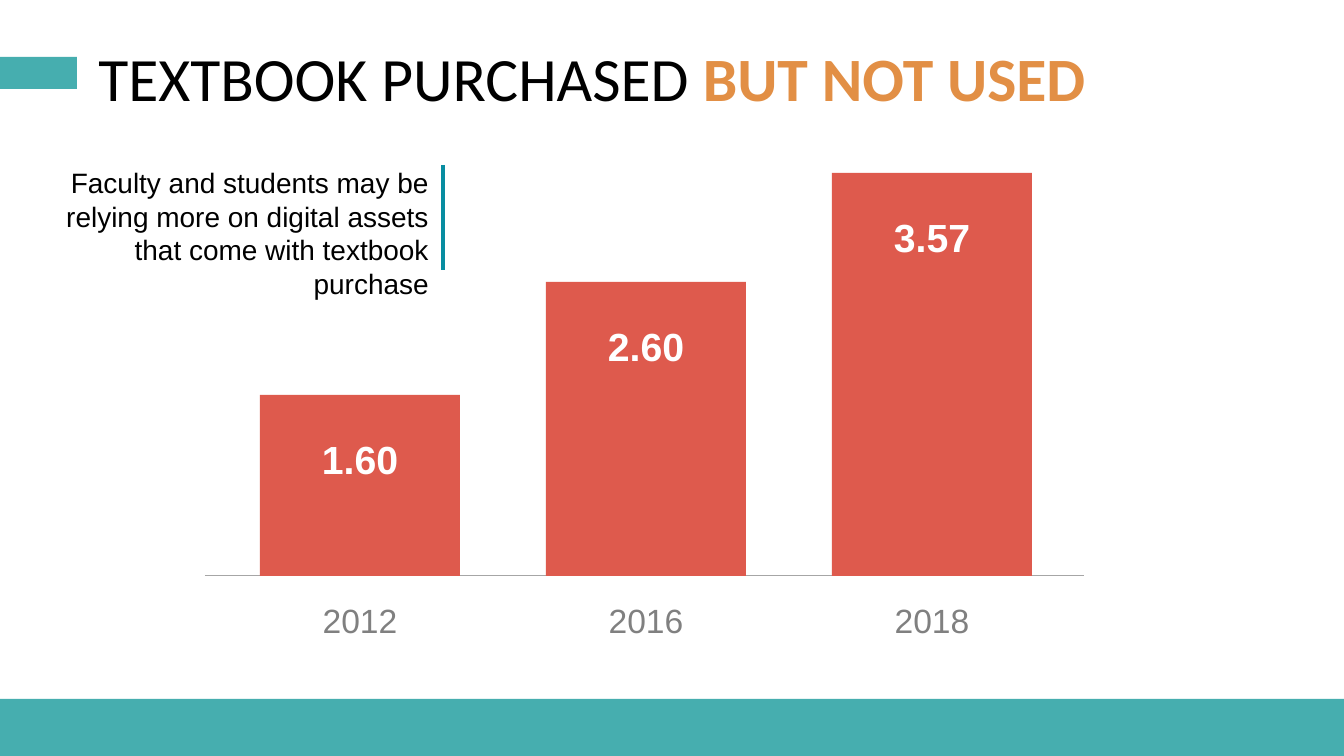
from lxml import etree
from pptx import Presentation
from pptx.dml.color import RGBColor
from pptx.enum.shapes import MSO_CONNECTOR, MSO_SHAPE
from pptx.enum.text import MSO_ANCHOR, MSO_AUTO_SIZE, PP_ALIGN
from pptx.oxml.ns import qn
from pptx.util import Pt

RECT, LINE = MSO_SHAPE.RECTANGLE, MSO_CONNECTOR.STRAIGHT
CENTER, RIGHT, LEFT = PP_ALIGN.CENTER, PP_ALIGN.RIGHT, PP_ALIGN.LEFT
TOP = MSO_ANCHOR.TOP
NO_FIT, GROW = MSO_AUTO_SIZE.NONE, MSO_AUTO_SIZE.SHAPE_TO_FIT_TEXT

COLORS = {"teal": "46AEAF", "rule": "088DA1", "bar": "DE5A4D", "axis": "A6A6A6",
          "year": "808080", "accent": "E28F45", "black": "000000", "white": "FFFFFF"}
TITLE = [("TEXTBOOK PURCHASED ", "black", False), ("BUT NOT USED", "accent", True)]
NOTE = ("Faculty and students may be relying more on digital assets "
        "that come with textbook purchase")
BARS = [("2012", 1.60), ("2016", 2.60), ("2018", 3.57)]

SCALE = 914400 / 134.4
BASELINE, UNIT = 576, 113
BAR_LEFT, BAR_WIDTH, BAR_PITCH = 260, 200, 286


def px(*lengths):
    return [round(n * SCALE) for n in lengths]


def rgb(name):
    return RGBColor.from_string(COLORS[name])


def add_rect(s, box, color):
    sp = s.shapes.add_shape(RECT, *px(*box))
    sp.shadow.inherit = False
    sp.fill.solid()
    sp.fill.fore_color.rgb = rgb(color)
    sp.line.fill.background()


def add_line(s, ends, color, width):
    line = s.shapes.add_connector(LINE, *px(*ends))
    line.line.color.rgb = rgb(color)
    line.line.width = Pt(width)
    etree.SubElement(line._element.spPr, qn("a:effectLst"))


def add_text(s, box, text, size, color, align=CENTER, spacing=1.2, bold=False, wrap=False):
    tf = s.shapes.add_textbox(*px(*box)).text_frame
    tf.word_wrap = wrap
    tf.auto_size = GROW
    p = tf.paragraphs[0]
    p.text = text
    p.alignment = align
    p.line_spacing = spacing
    p.font.name = "Arial"
    p.font.size = Pt(size)
    p.font.bold = bold
    p.font.color.rgb = rgb(color)


def add_title(s):
    sp = s.shapes.title
    sp.left, sp.top, sp.width, sp.height = px(85, 42, 1259, 77)
    tf = sp.text_frame
    tf.auto_size = NO_FIT
    tf.vertical_anchor = TOP
    p = tf.paragraphs[0]
    p.alignment = LEFT
    p.line_spacing = 0.9
    p.font.name = "Calibri"
    p.font.size = Pt(33)
    for text, color, bold in TITLE:
        r = p.add_run()
        r.text = text
        r.font.name = "Calibri"
        r.font.size = Pt(33)
        r.font.bold = bold
        r.font.color.rgb = rgb(color)


def main():
    prs = Presentation()
    prs.slide_width, prs.slide_height = px(1344, 756)
    s = prs.slides.add_slide(prs.slide_layouts[5])
    add_rect(s, (0, 699, 1344, 57), "teal")
    add_rect(s, (0, 57, 77, 32), "teal")
    add_title(s)
    add_line(s, (205, BASELINE, 1084, BASELINE), "axis", 0.5)
    for i, (year, value) in enumerate(BARS):
        left = BAR_LEFT + i * BAR_PITCH
        height = round(value * UNIT)
        top = BASELINE - height
        label_left = left + BAR_WIDTH / 2 - 52
        add_rect(s, (left, top, BAR_WIDTH, height), "bar")
        add_text(s, (label_left, 585, 104, 62), year, 18, "year")
        add_text(s, (label_left, top + 24, 104, 71), f"{value:.2f}", 21, "white", bold=True)
    add_text(s, (0, 159, 442, 149), NOTE, 15, "black", RIGHT, Pt(18), wrap=True)
    add_line(s, (443, 165, 443, 270), "rule", 2)
    prs.save("out.pptx")


if __name__ == "__main__":
    main()
